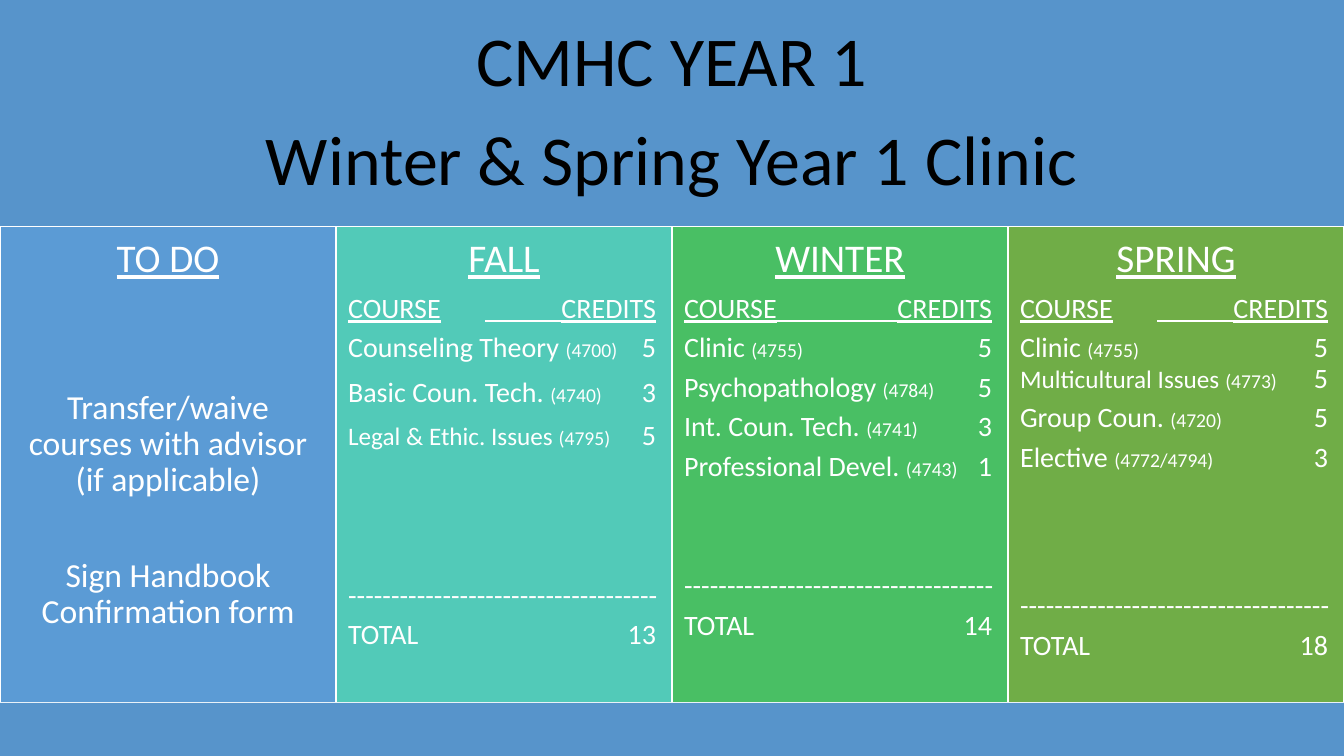
from lxml.etree import SubElement
from pptx import Presentation
from pptx.dml.color import RGBColor
from pptx.enum.shapes import MSO_CONNECTOR, MSO_SHAPE
from pptx.enum.text import MSO_ANCHOR, PP_ALIGN
from pptx.oxml.ns import qn
from pptx.util import Pt

BAND = RGBColor(0x57, 0x94, 0xCB)
BLUE = RGBColor(0x5B, 0x9B, 0xD5)
TEAL = RGBColor(0x52, 0xCA, 0xB8)
GREEN = RGBColor(0x49, 0xBF, 0x64)
OLIVE = RGBColor(0x70, 0xAD, 0x47)
WHITE = RGBColor(0xFF, 0xFF, 0xFF)
BLACK = RGBColor(0x00, 0x00, 0x00)

WIDTH, HEIGHT = 960, 540
COL_TOP, COL_HEIGHT, COL_WIDTH = 162, 340, 240
INSET = 8.64
CREDIT_TAB = 220
AFTER = 0.33  # space after a paragraph, as a share of its text size


class Plan:
    def __init__(self, slide, font="Calibri"):
        self.s = slide
        self.font = font

    def panel(self, x, y, w, h, fill, line=None, inset=INSET, anchor=MSO_ANCHOR.TOP):
        sp = self.s.shapes.add_shape(MSO_SHAPE.RECTANGLE, Pt(x), Pt(y), Pt(w), Pt(h))
        sp.shadow.inherit = False
        sp.fill.solid()
        sp.fill.fore_color.rgb = fill
        if line is None:
            sp.line.fill.background()
        else:
            sp.line.color.rgb = line
            sp.line.width = Pt(1)
        tf = sp.text_frame
        frame = {"word_wrap": True, "vertical_anchor": anchor}
        frame |= {f"margin_{side}": Pt(inset) for side in ("left", "top", "right", "bottom")}
        for name, value in frame.items():
            setattr(tf, name, value)
        return tf

    def para(self, tf, runs, align=PP_ALIGN.LEFT, color=WHITE, underline=False,
             before=0, after=None):
        """Add a paragraph of (text, size) runs; a tab leads to the credits edge."""
        p = tf.paragraphs[0]
        if p.runs:
            p = tf.add_paragraph()
        if after is None:
            after = AFTER * max(size for _, size in runs)
        layout = {"alignment": align, "line_spacing": 0.9,
                  "space_before": Pt(before), "space_after": Pt(after)}
        for name, value in layout.items():
            setattr(p, name, value)
        if any("\t" in text for text, _ in runs):
            tabs = SubElement(p._p.get_or_add_pPr(), qn("a:tabLst"))
            SubElement(tabs, qn("a:tab"), pos=str(Pt(CREDIT_TAB)), algn="r")
        for text, size in runs:
            r = p.add_run()
            r.text = text
            style = {"name": self.font, "size": Pt(size), "underline": underline}
            for name, value in style.items():
                setattr(r.font, name, value)
            r.font.color.rgb = color

    def rule(self, x1, x2, y):
        line = self.s.shapes.add_connector(MSO_CONNECTOR.STRAIGHT, Pt(x1), Pt(y), Pt(x2), Pt(y))
        line.line.color.rgb = WHITE
        line.line.width = Pt(1.4)
        SubElement(line._element.spPr, qn("a:effectLst"))

    def column(self, index, heading, fill):
        tf = self.panel(index * COL_WIDTH, COL_TOP, COL_WIDTH, COL_HEIGHT, fill, WHITE)
        self.para(tf, [(heading, 28)], PP_ALIGN.CENTER, underline=True)
        return tf

    def term(self, index, heading, fill, rule_start, courses, gap, total):
        tf = self.column(index, heading, fill)
        self.para(tf, [("COURSE\tCREDITS", 20)], underline=True)
        left = index * COL_WIDTH + INSET
        self.rule(left + rule_start, left + 152, 229.3)
        for name, size, code, credits, after in courses:
            self.para(tf, [(f"{name} ", size), (f"({code})", 14), (f"\t{credits}", 20)],
                      after=after)
        self.para(tf, [("-" * 36, 20)], before=gap)
        self.para(tf, [(f"TOTAL\t{total}", 20)])


# heading, fill, start of the header rule, courses, gap above the total, total
# course: name, size, code, credits, space after
TERMS = [
    ("FALL", TEAL, 98, [
        ("Counseling Theory", 20, "4700", 5, 10),
        ("Basic Coun. Tech.", 20, "4740", 3, 9.4),
        ("Legal & Ethic. Issues", 18, "4795", 5, None)], 85.8, 13),
    ("WINTER", GREEN, 66, [
        ("Clinic", 20, "4755", 5, None),
        ("Psychopathology", 20, "4784", 5, None),
        ("Int. Coun. Tech.", 20, "4741", 3, None),
        ("Professional Devel.", 20, "4743", 1, None)], 57.2, 14),
    ("SPRING", OLIVE, 98, [
        ("Clinic", 20, "4755", 5, 0),
        ("Multicultural Issues", 18, "4773", 5, None),
        ("Group Coun.", 20, "4720", 5, None),
        ("Elective", 20, "4772/4794", 3, None)], 78, 18),
]


def main():
    prs = Presentation()
    prs.slide_width, prs.slide_height = Pt(WIDTH), Pt(HEIGHT)
    plan = Plan(prs.slides.add_slide(prs.slide_layouts[6]))

    title = plan.panel(0, 0, WIDTH, COL_TOP, BAND, inset=15, anchor=MSO_ANCHOR.MIDDLE)
    for text in ("CMHC YEAR 1", "Winter & Spring Year 1 Clinic"):
        plan.para(title, [(text, 50)], PP_ALIGN.CENTER, BLACK)

    todo = plan.column(0, "TO DO", BLUE)
    for text, before in (("Transfer/waive courses with advisor (if applicable)", 68.5),
                         ("Sign Handbook Confirmation form", 34.3)):
        plan.para(todo, [(text, 24)], PP_ALIGN.CENTER, before=before)

    for index, term in enumerate(TERMS, start=1):
        plan.term(index, *term)

    bottom = COL_TOP + COL_HEIGHT
    plan.panel(0, bottom, WIDTH, HEIGHT - bottom, BAND)
    prs.save("out.pptx")


if __name__ == "__main__":
    main()
